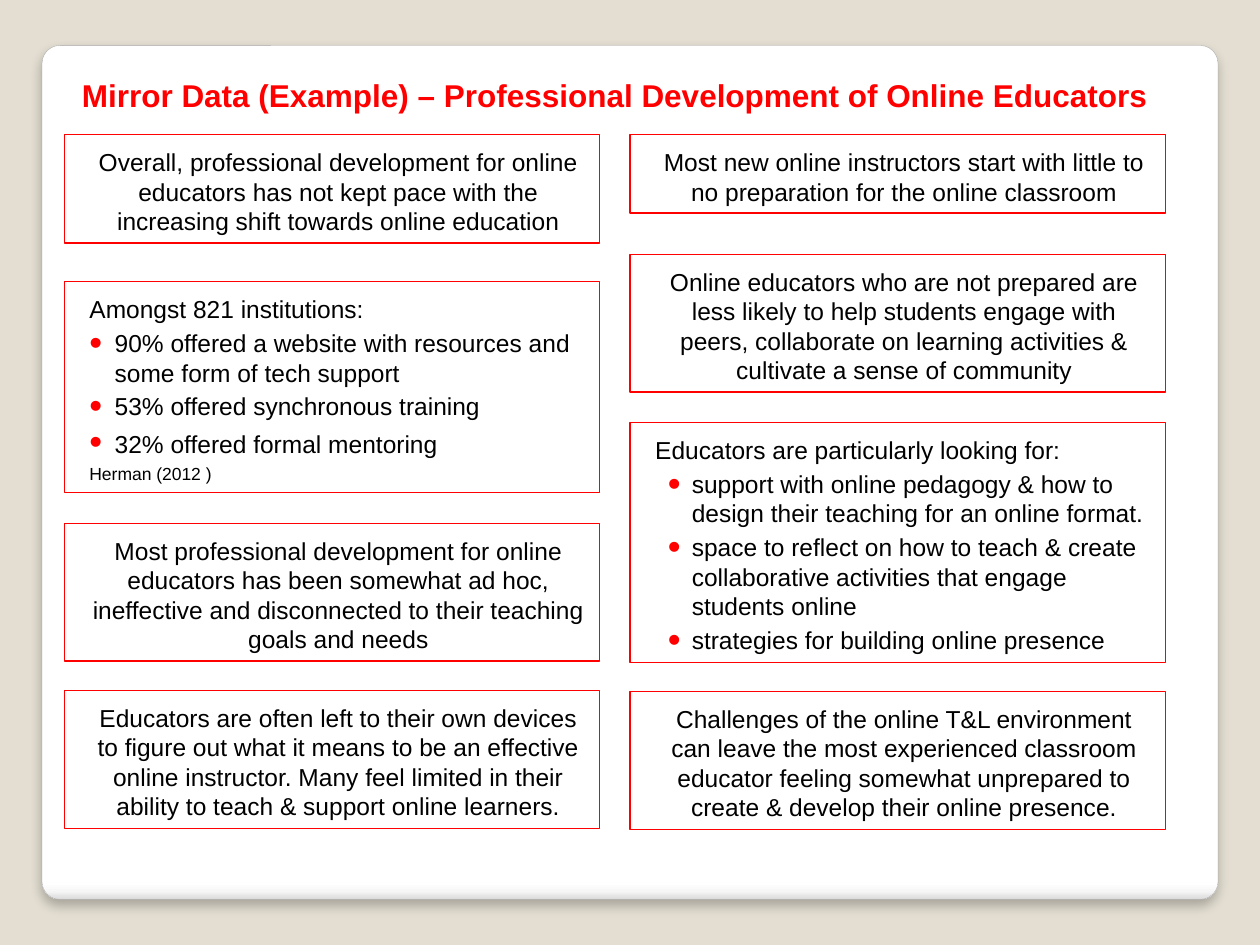
from lxml.etree import SubElement
from pptx import Presentation
from pptx.dml.color import RGBColor
from pptx.enum.shapes import MSO_SHAPE
from pptx.enum.text import MSO_ANCHOR, MSO_AUTO_SIZE, PP_ALIGN
from pptx.oxml.ns import qn
from pptx.util import Pt

RED, BLACK = "FF0000", "000000"
TITLE = "Mirror Data (Example) – Professional Development of Online Educators"
BOX_WIDTH = 306

# Each box: top, height, statement, bullets, source
COLUMNS = [
    {"left": 36.7, "indent": (14.4, -14.4), "boxes": [
        (77, 61.9, "Overall, professional development for online educators has not kept "
                   "pace with the increasing shift towards online education", [], ""),
        (161, 120.4, "Amongst 821 institutions:",
         ["90% offered a website with resources and some form of tech support",
          "53% offered synchronous training",
          "32% offered formal mentoring "], "Herman (2012 )"),
        (299, 78.8, "Most professional development for online educators has been somewhat "
                    "ad hoc, ineffective and disconnected to their teaching goals and needs",
         [], ""),
        (394.5, 78.8, "Educators are often left to their own devices to figure out what it "
                      "means to be an effective online instructor. Many feel limited in "
                      "their ability to teach & support online learners.", [], ""),
    ]},
    {"left": 360, "indent": (20.9, -13.7), "boxes": [
        (77, 44.8, "Most new online instructors start with little to no preparation for "
                   "the online classroom", [], ""),
        (145.3, 78.8, "Online educators who are not prepared are less likely to help "
                      "students engage with peers, collaborate on learning activities & "
                      "cultivate a sense of community", [], ""),
        (241.5, 137.2, "Educators are particularly looking for:",
         ["support with online pedagogy & how to design their teaching for an online format.",
          "space to reflect on how to teach & create collaborative activities that engage "
          "students online",
          "strategies for building online presence"], ""),
        (395.1, 78.8, "Challenges of the online T&L environment can leave the most "
                      "experienced classroom educator feeling somewhat unprepared to create "
                      "& develop their online presence.", [], ""),
    ]},
]


def rgb(color):
    return RGBColor.from_string(color)


def place(shape, left, top, width, height):
    shape.left, shape.top, shape.width, shape.height = map(Pt, (left, top, width, height))


def set_font(font, size, color, bold=False):
    font.name, font.size, font.bold = "Arial", Pt(size), bold
    font.color.rgb = rgb(color)


def add_panel(slide):
    panel = slide.shapes.add_shape(
        MSO_SHAPE.ROUNDED_RECTANGLE, Pt(24), Pt(26), Pt(672), Pt(488))
    panel.adjustments[0] = 0.021
    panel.line.color.rgb = rgb("A4A4A4")
    panel.line.width = Pt(0.16)
    panel.fill.gradient()
    panel.fill.gradient_angle = 270
    stops = panel._element.spPr.find(qn("a:gradFill")).find(qn("a:gsLst"))
    for stop in list(stops):
        stops.remove(stop)
    for percent, color in ((0, "FFFFFF"), (98, "FFFFFF"), (99, "F7F7F7"), (100, "DADADA")):
        stop = SubElement(stops, qn("a:gs"), pos=str(percent * 1000))
        SubElement(stop, qn("a:srgbClr"), val=color)
    panel.shadow.inherit = False
    effects = panel._element.spPr.find(qn("a:effectLst"))
    shadow = SubElement(effects, qn("a:outerShdw"), blurRad=str(Pt(6)), dist=str(Pt(4)),
                        dir="5400000", algn="t", rotWithShape="0")
    shade = SubElement(shadow, qn("a:srgbClr"), val=BLACK)
    SubElement(shade, qn("a:alpha"), val="25000")
    return panel


def add_bullet(para, margin, indent):
    properties = para._p.get_or_add_pPr()
    properties.set("marL", str(Pt(margin)))
    properties.set("indent", str(Pt(indent)))
    color = SubElement(properties, qn("a:buClr"))
    SubElement(color, qn("a:srgbClr"), val=RED)
    SubElement(properties, qn("a:buSzPct"), val="150000")
    SubElement(properties, qn("a:buFont"), typeface="Arial")
    SubElement(properties, qn("a:buChar"), char="•")


def add_box(slide, left, top, height, indent, statement, bullets, source):
    box = slide.shapes.add_shape(
        MSO_SHAPE.RECTANGLE, Pt(left), Pt(top), Pt(BOX_WIDTH), Pt(height))
    box.shadow.inherit = False
    box.fill.background()
    box.line.color.rgb = rgb(RED)
    box.line.width = Pt(0.75)
    frame = box.text_frame
    frame.word_wrap = True
    frame.auto_size = MSO_AUTO_SIZE.SHAPE_TO_FIT_TEXT
    frame.vertical_anchor = MSO_ANCHOR.TOP
    frame.margin_left, frame.margin_top = Pt(14.4), Pt(7.2)
    frame.margin_right, frame.margin_bottom = Pt(7.2), Pt(3.6)

    texts = [statement, *bullets] + ([source] if source else [])
    for number, text in enumerate(texts):
        para = frame.paragraphs[0] if number == 0 else frame.add_paragraph()
        para.add_run().text = text
        para.alignment = PP_ALIGN.LEFT if bullets else PP_ALIGN.CENTER
        para.space_before = Pt(2.5)
        is_source = number > len(bullets)
        set_font(para.font, 10 if is_source else 14, BLACK)
        if 0 < number <= len(bullets):
            add_bullet(para, *indent)
            if source and number == len(bullets):
                # A larger closing space makes the line above the source taller
                span = para.add_run()
                span.text = "\N{NO-BREAK SPACE}"
                span.font.size = Pt(16)


def main():
    deck = Presentation()
    deck.slide_width, deck.slide_height = Pt(720), Pt(540)
    slide = deck.slides.add_slide(deck.slide_layouts[5])
    slide.background.fill.solid()
    slide.background.fill.fore_color.rgb = rgb("E3DED1")

    title = slide.shapes.title
    title._element.addprevious(add_panel(slide)._element)
    place(title, -2.9, 20.9, 708.5, 47.5)
    title.text_frame.text = TITLE
    title.text_frame.auto_size = MSO_AUTO_SIZE.NONE
    title.text_frame.vertical_anchor = MSO_ANCHOR.BOTTOM
    para = title.text_frame.paragraphs[0]
    para.alignment = PP_ALIGN.CENTER
    para.line_spacing = 1.2
    set_font(para.font, 18, RED, bold=True)

    for column in COLUMNS:
        for top, height, *texts in column["boxes"]:
            add_box(slide, column["left"], top, height, column["indent"], *texts)
    deck.save("out.pptx")


if __name__ == "__main__":
    main()
